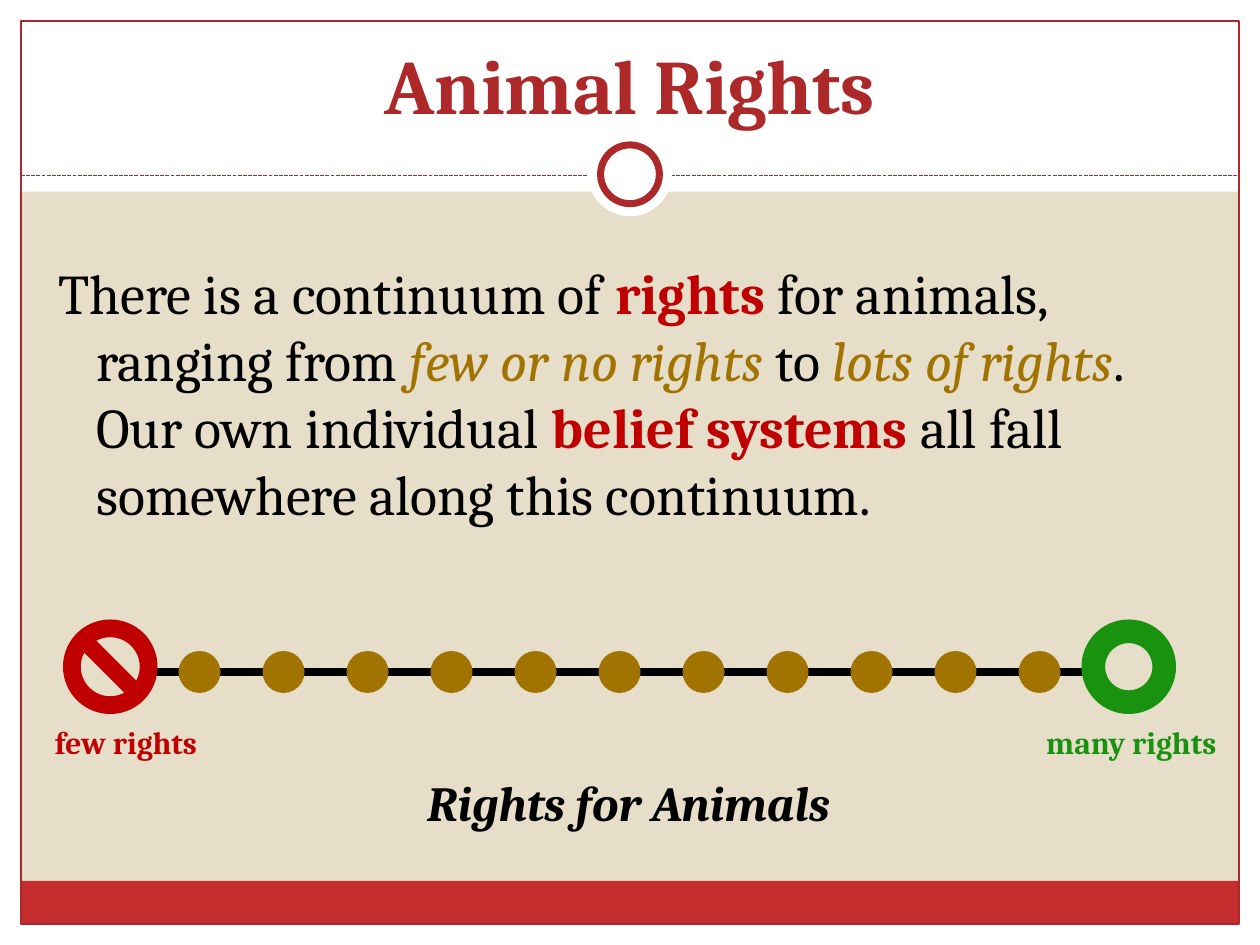
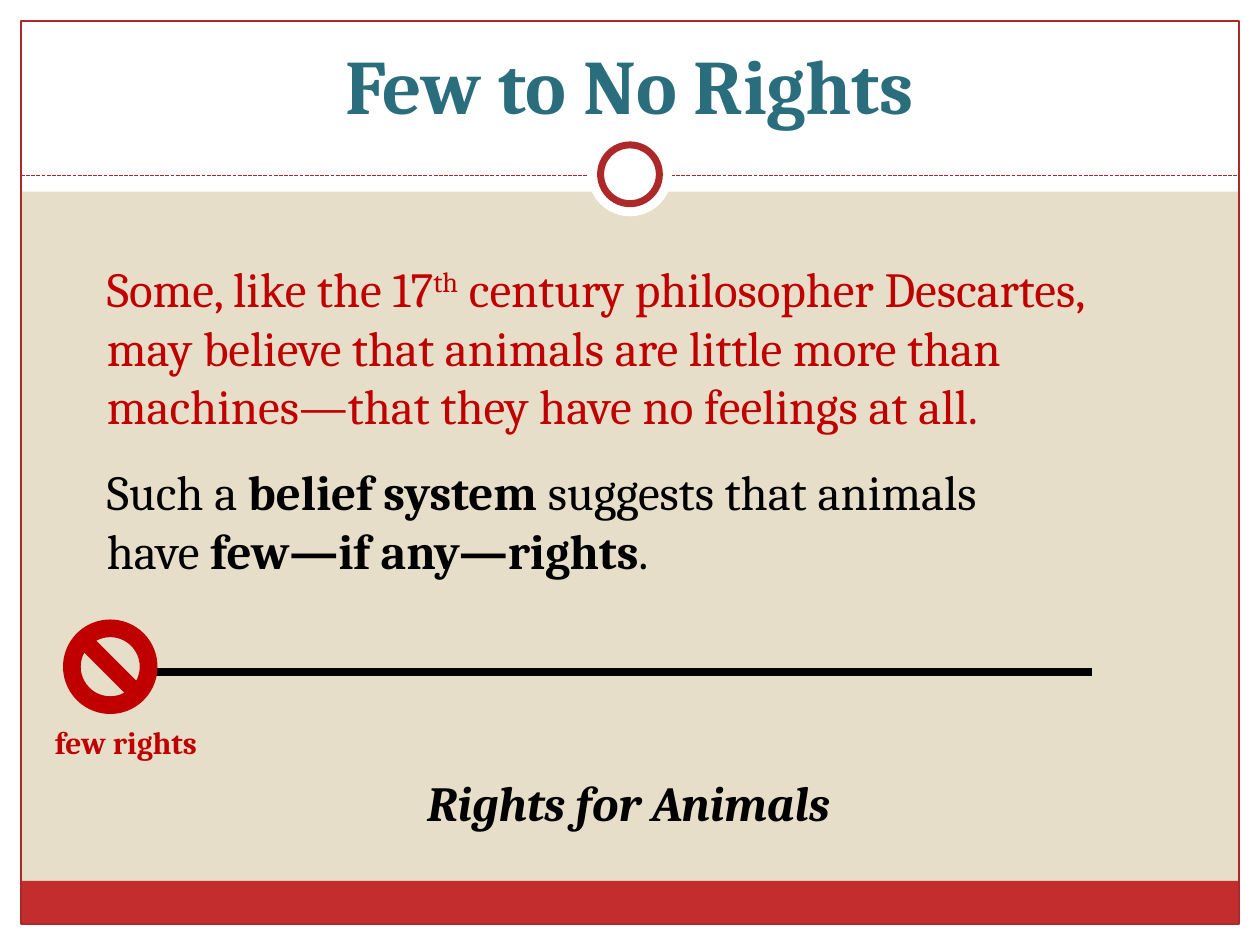
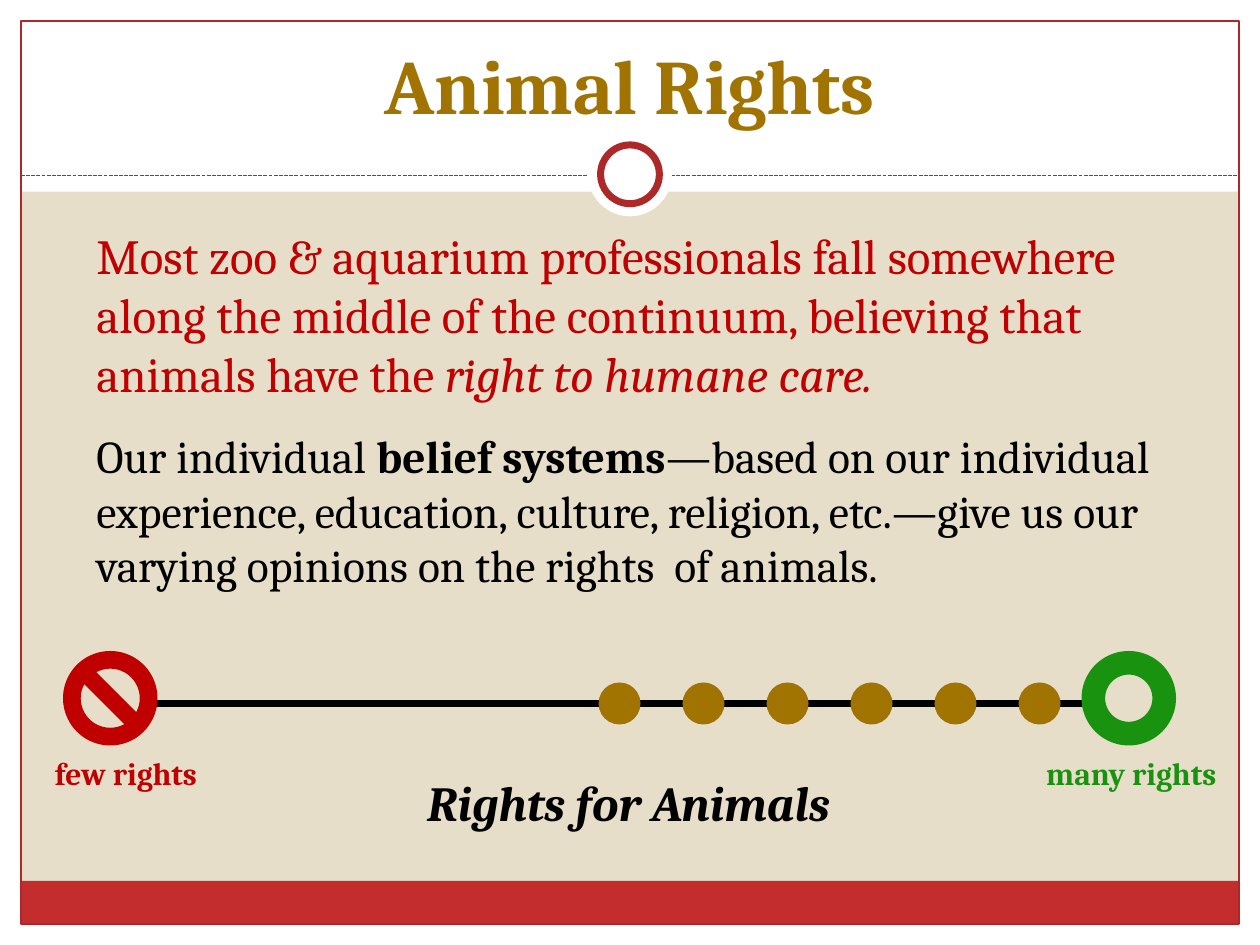
from lxml import etree
from pptx import Presentation
from pptx.dml.color import RGBColor
from pptx.enum.dml import MSO_LINE
from pptx.enum.shapes import MSO_CONNECTOR, MSO_SHAPE
from pptx.enum.text import MSO_ANCHOR, PP_ALIGN
from pptx.oxml.ns import qn
from pptx.util import Inches, Pt

RECT, OVAL = MSO_SHAPE.RECTANGLE, MSO_SHAPE.OVAL
BAN, RING, DOT = MSO_SHAPE.NO_SYMBOL, MSO_SHAPE.DONUT, MSO_SHAPE.FLOWCHART_CONNECTOR
STRAIGHT, DASH = MSO_CONNECTOR.STRAIGHT, MSO_LINE.SQUARE_DOT
LEFT, CENTER = PP_ALIGN.LEFT, PP_ALIGN.CENTER
TOP, BOTTOM = MSO_ANCHOR.TOP, MSO_ANCHOR.BOTTOM

FONT = "Cambria"
COLS, ROWS, EDGE = 120, 90, 2
HEX = {
    "sand": "E7DEC9", "white": "FFFFFF", "black": "000000", "band": "C32D2E",
    "brick": "AC2829", "red": "C00000", "gold": "A17301", "green": "199210",
    "teal": "2A6D7D",
}


def tint(name):
    return RGBColor.from_string(HEX[name])


def grid(*cells):
    return [Inches(cell / 12) for cell in cells]


def shape(slide, kind, box, fill=None, line=None, width=0.75):
    item = slide.shapes.add_shape(kind, *grid(*box))
    item.shadow.inherit = False
    if fill:
        item.fill.solid()
        item.fill.fore_color.rgb = tint(fill)
    else:
        item.fill.background()
    if line:
        item.line.color.rgb = tint(line)
        item.line.width = Pt(width)
    else:
        item.line.fill.background()


def rule(slide, left, right, row, color, width, dash=None):
    item = slide.shapes.add_connector(STRAIGHT, *grid(left, row, right, row))
    item.line.color.rgb = tint(color)
    item.line.width = Pt(width)
    if dash:
        item.line.dash_style = dash
    etree.SubElement(item._element.spPr, qn("a:effectLst"))


def text(slide, box, runs, size=28, color="black", bold=False, italic=False,
         align=LEFT, anchor=TOP, hang=0):
    frame = slide.shapes.add_textbox(*grid(*box)).text_frame
    frame.word_wrap = True
    frame.vertical_anchor = anchor
    para = frame.paragraphs[0]
    para.alignment = align
    if hang:
        props = para._p.get_or_add_pPr()
        props.set("marL", str(Inches(hang)))
        props.set("indent", str(-Inches(hang)))
    for words, look in runs:
        run = para.add_run()
        run.text = words
        font = run.font
        font.name, font.size = FONT, Pt(size)
        font.bold = look.get("bold", bold)
        font.italic = look.get("italic", italic)
        font.color.rgb = tint(look.get("color", color))
        if "raised" in look:
            run._r.get_or_add_rPr().set("baseline", str(look["raised"] * 1000))


def base(deck, title, color):
    slide = deck.slides.add_slide(deck.slide_layouts[6])
    back = slide.background.fill
    back.solid()
    back.fore_color.rgb = tint("sand")
    inner = COLS - 2 * EDGE
    for box in ((0, ROWS - EDGE, COLS, EDGE), (0, 0, COLS, 18.25),
                (0, 0, EDGE, ROWS), (COLS - EDGE, 0, EDGE, ROWS)):
        shape(slide, RECT, box, "white")
    shape(slide, RECT, (EDGE, 83.9, inner, 4.1), "band")
    shape(slide, RECT, (EDGE, EDGE, inner, ROWS - 2 * EDGE), line="brick")
    rule(slide, EDGE, COLS - EDGE, 16.75, "brick", 0.75, DASH)
    shape(slide, OVAL, (56, 12.6, 8, 8), "white")
    shape(slide, OVAL, (57.2, 13.8, 5.6, 5.6), "white", "brick", 4)
    text(slide, (4, 3, 112, 10), [(title, {})], size=44, color=color,
         bold=True, align=CENTER, anchor=BOTTOM)
    return slide


def label(slide, box, words, color="black", size=18, italic=False):
    text(slide, box, [(words, {})], size=size, color=color, bold=True,
         italic=italic, align=CENTER)


def scale(slide, row=59, dots=(), many=True):
    rule(slide, 14, 104, row + 5, "black", 4.5)
    shape(slide, BAN, (6, row, 9, 9), "red")
    label(slide, (3, row + 9.25, 18, 4.8), "few rights", "red")
    if many:
        shape(slide, RING, (103, row, 9, 9), "green")
        label(slide, (96, row + 9.25, 23.5, 4.8), "many rights", "green")
    for step in dots:
        shape(slide, DOT, (17 + 8 * step, row + 3, 4, 4), "gold")
    label(slide, (35, 73, 49.7, 6.8), "Rights for Animals", size=28, italic=True)


def main():
    deck = Presentation()
    deck.slide_width, deck.slide_height = grid(COLS, ROWS)
    key = {"color": "red", "bold": True}
    soft = {"color": "gold", "italic": True}
    bold = {"bold": True}

    slide = base(deck, "Animal Rights", "brick")
    text(slide, (4.4, 24, 111.6, 60), [
        ("There is a continuum of ", {}), ("rights ", key),
        ("for animals, ranging from ", {}), ("few or no rights", soft),
        (" to ", {}), ("lots of rights", soft),
        (". Our own individual ", {}), ("belief systems ", key),
        ("all fall somewhere along this continuum.", {}),
    ], size=32, hang=0.3)
    scale(slide, dots=range(11))

    slide = base(deck, "Few to No Rights", "teal")
    text(slide, (9, 24, 102.7, 18.1), [
        ("Some, like the 17", {}), ("th", {"raised": 30}),
        (" century philosopher Descartes, may believe that animals are little "
         "more than machines—that they have no feelings at all.", {}),
    ], color="red")
    text(slide, (9, 43.4, 94.3, 12.5), [
        ("Such a ", {}), ("belief system", bold),
        (" suggests that animals have ", {}), ("few—if any—rights", bold),
        (".", {}),
    ])
    scale(slide, many=False)

    slide = base(deck, "Animal Rights", "gold")
    text(slide, (8, 20.9, 104, 18.1), [
        ("Most zoo & aquarium professionals fall somewhere along the middle of "
         "the continuum, believing that animals have the", {}),
        (" right to humane care.", {"italic": True}),
    ], color="red")
    text(slide, (8, 40.2, 107, 16.9), [
        ("Our individual ", {}), ("belief systems", bold),
        ("—based on our individual experience, education, culture, religion, "
         "etc.—give us our varying opinions on the rights  of animals.", {}),
    ], size=26)
    scale(slide, row=62, dots=range(5, 11))

    deck.save("out.pptx")


if __name__ == "__main__":
    main()
